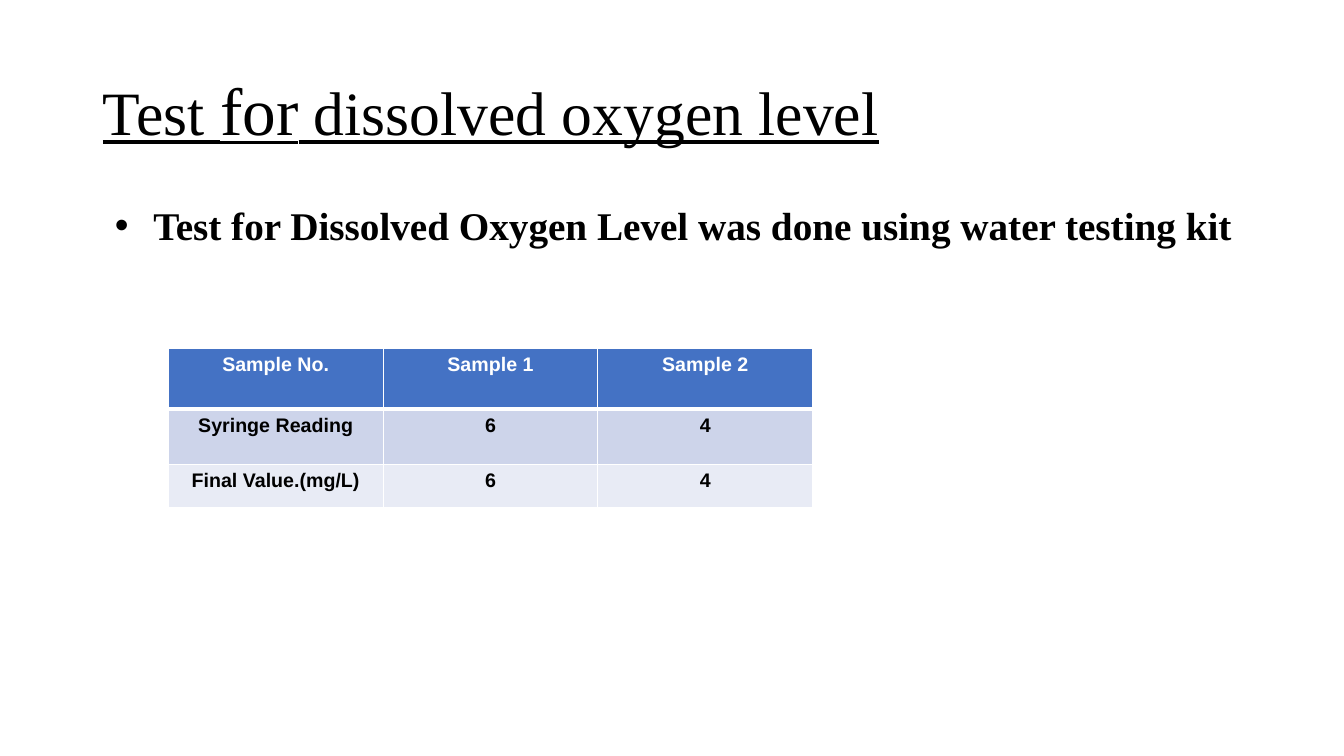
from lxml import etree
from pptx import Presentation, util as u
from pptx.dml.color import RGBColor
from pptx.enum import text
from pptx.oxml import ns

WIDTH, HEIGHT = u.Inches(13.33), u.Inches(7.5)
SERIF, SANS = "Times New Roman", "Arial"
BLACK, WHITE = "000000", "FFFFFF"
MARGIN, CONTENT_WIDTH = 0.92, 11.5
COLUMN_WIDTH = 2.13
READINGS = [
    ("Sample No.", "Sample 1", "Sample 2"),
    ("Syringe Reading", "6", "4"),
    ("Final Value.(mg/L)", "6", "4"),
]
ROW_HEIGHTS = [0.6, 0.55, 0.43]
ROW_FILLS = ["4472C4", "CDD4EA", "E8EBF5"]


def color(hex_code):
    return RGBColor.from_string(hex_code)


def style(font, name, size, hex_code, bold=False, underline=False):
    font.name, font.size = name, u.Pt(size)
    font.color.rgb = color(hex_code)
    font.bold, font.underline = bold, underline


def place(holder, top, height, anchor):
    """Move a placeholder into the content column and fix its text frame."""
    holder.left, holder.top = u.Inches(MARGIN), u.Inches(top)
    holder.width, holder.height = u.Inches(CONTENT_WIDTH), u.Inches(height)
    frame = holder.text_frame
    frame.auto_size = text.MSO_AUTO_SIZE.NONE
    frame.word_wrap = True
    frame.vertical_anchor = anchor
    paragraph = frame.paragraphs[0]
    paragraph.alignment = text.PP_ALIGN.LEFT
    return paragraph


def add_title(holder, parts):
    paragraph = place(holder, 0.4, 1.45, text.MSO_ANCHOR.MIDDLE)
    paragraph.line_spacing = 0.9
    for words, size in parts:
        run = paragraph.add_run()
        run.text = words
        style(run.font, SERIF, size, BLACK, underline=True)


def add_bullet(holder, words):
    paragraph = place(holder, 2, 4.76, text.MSO_ANCHOR.TOP)
    paragraph.text = words
    properties = paragraph._p.get_or_add_pPr()
    properties.set("marL", str(u.Inches(0.5)))
    properties.set("indent", str(u.Inches(-0.38)))
    etree.SubElement(properties, ns.qn("a:buFont"), typeface=SANS)
    etree.SubElement(properties, ns.qn("a:buChar"), char="•")
    paragraph.line_spacing = 0.9
    paragraph.space_before = u.Pt(0)
    style(paragraph.runs[0].font, SERIF, 28, BLACK, bold=True)


def set_borders(cell, top, bottom):
    """Draw white borders; top and bottom are widths in points."""
    properties = cell._tc.get_or_add_tcPr()
    sides = [("lnL", 1), ("lnR", 1), ("lnT", top), ("lnB", bottom)]
    for side, width in sides:
        line = etree.SubElement(properties, ns.qn(f"a:{side}"), w=str(u.Pt(width)))
        fill = etree.SubElement(line, ns.qn("a:solidFill"))
        etree.SubElement(fill, ns.qn("a:srgbClr"), val=WHITE)


def add_readings(slide, left, top):
    columns = len(READINGS[0])
    table = slide.shapes.add_table(
        len(READINGS), columns, u.Inches(left), u.Inches(top),
        u.Inches(COLUMN_WIDTH * columns), u.Inches(sum(ROW_HEIGHTS))).table
    for column in table.columns:
        column.width = u.Inches(COLUMN_WIDTH)
    for r, values in enumerate(READINGS):
        table.rows[r].height = u.Inches(ROW_HEIGHTS[r])
        for c, value in enumerate(values):
            cell = table.cell(r, c)
            set_borders(cell, top=3 if r == 1 else 1, bottom=3 if r == 0 else 1)
            cell.fill.solid()
            cell.fill.fore_color.rgb = color(ROW_FILLS[r])
            paragraph = cell.text_frame.paragraphs[0]
            paragraph.text = value
            paragraph.alignment = text.PP_ALIGN.CENTER
            style(paragraph.runs[0].font, SANS, 14, BLACK if r else WHITE, bold=True)


def main():
    deck = Presentation()
    deck.slide_width, deck.slide_height = WIDTH, HEIGHT
    slide = deck.slides.add_slide(deck.slide_layouts[1])
    add_title(slide.shapes.title,
              [("Test ", 44), ("for", 48), (" dissolved oxygen level", 44)])
    add_bullet(slide.placeholders[1],
               "Test for Dissolved Oxygen Level was done using water testing kit")
    add_readings(slide, 1.67, 3.46)
    deck.save("out.pptx")


if __name__ == "__main__":
    main()
